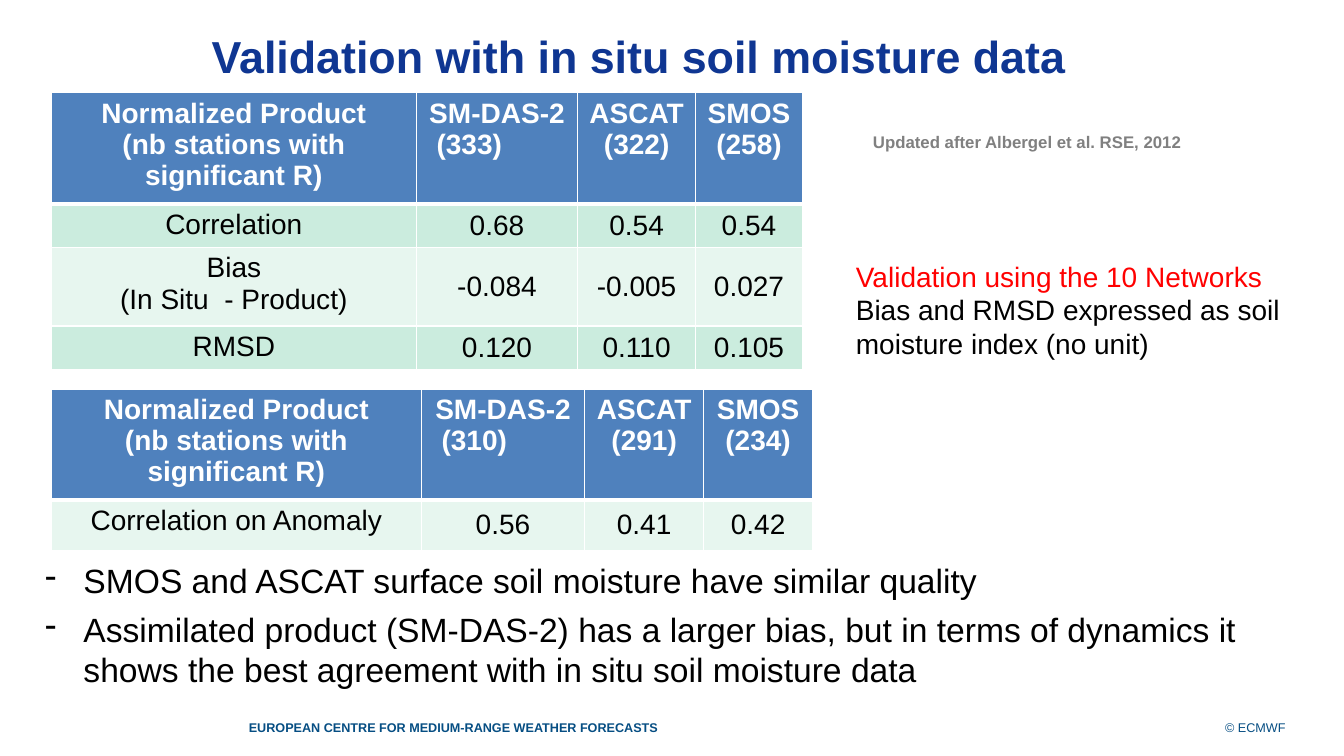
from lxml.etree import SubElement
from pptx import Presentation
from pptx.dml.color import RGBColor
from pptx.enum.text import MSO_ANCHOR, PP_ALIGN
from pptx.oxml.ns import qn
from pptx.util import Inches, Pt

COLORS = {
    "title": "0F3692", "footer": "064E83", "header": "4F81BD", "dark_band": "CBECDE",
    "light_band": "E7F6EF", "white": "FFFFFF", "black": "000000", "red": "FF0000", "gray": "808080",
}
FONT = "Arial"

TITLE = "Validation with in situ soil moisture data"
PRODUCT_HEADING = "Normalized Product\n(nb stations with significant R)"
TABLES = [
    {
        "position": (0.51, 0.92),
        "columns": [3.62, 1.6, 1.17, 1.06],
        "heights": [1.1, 0.42, 0.78, 0.43],
        "bands": ["header", "dark_band", "light_band", "dark_band"],
        "rows": [
            [PRODUCT_HEADING, "SM-DAS-2\n(333)", "ASCAT\n(322)", "SMOS\n(258)"],
            ["Correlation", "0.68", "0.54", "0.54"],
            ["Bias\n(In Situ  - Product)", "-0.084", "-0.005", "0.027"],
            ["RMSD", "0.120", "0.110", "0.105"],
        ],
    },
    {
        "position": (0.51, 3.86),
        "columns": [3.67, 1.62, 1.18, 1.08],
        "heights": [1.1, 0.5],
        "bands": ["header", "light_band"],
        "rows": [
            [PRODUCT_HEADING, "SM-DAS-2\n(310)", "ASCAT\n(291)", "SMOS\n(234)"],
            ["Correlation on Anomaly", "0.56", "0.41", "0.42"],
        ],
    },
]
CITATION = [("Updated after Albergel et al. RSE, 2012", "gray")]
NETWORK_NOTE = [
    ("Validation using the 10 Networks", "red"),
    ("Bias and RMSD expressed as soil moisture index (no unit)", "black"),
]
CONCLUSIONS = [
    ("SMOS and ASCAT surface soil moisture have similar quality", "black"),
    ("Assimilated product (SM-DAS-2) has a larger bias, but in terms of dynamics it "
     "shows the best agreement with in situ soil moisture data", "black"),
]
ORGANISATION = [("EUROPEAN CENTRE FOR MEDIUM-RANGE WEATHER FORECASTS", "footer")]
COPYRIGHT = [("© ECMWF", "footer")]


def color(name):
    return RGBColor.from_string(COLORS[name])


def style(paragraph, size, color_name, bold=False, align=PP_ALIGN.LEFT):
    paragraph.alignment = align
    font = paragraph.font
    font.name, font.size, font.bold = FONT, Pt(size), bold
    font.color.rgb = color(color_name)


def remove_margins(frame):
    frame.margin_left = frame.margin_right = frame.margin_top = frame.margin_bottom = 0


def add_text(slide, box, lines, size, bold=False, align=PP_ALIGN.LEFT, wrap=True):
    shape = slide.shapes.add_textbox(*map(Inches, box))
    frame = shape.text_frame
    frame.word_wrap = wrap
    frame.text = "\n".join(text for text, _ in lines)
    for paragraph, (_, color_name) in zip(frame.paragraphs, lines):
        style(paragraph, size, color_name, bold, align)
    return shape


def add_footer(slide, box, lines, bold, align):
    frame = add_text(slide, box, lines, 9, bold, align).text_frame
    remove_margins(frame)
    frame.vertical_anchor = MSO_ANCHOR.BOTTOM


def set_borders(cell, widths):
    properties = cell._tc.get_or_add_tcPr()
    for index, (side, width) in enumerate(widths.items()):
        line = properties.makeelement(qn(f"a:ln{side}"), {"w": str(Pt(width))})
        fill = SubElement(line, qn("a:solidFill"))
        SubElement(fill, qn("a:srgbClr"), val=COLORS["white"])
        properties.insert(index, line)


def add_results_table(slide, data):
    rows, columns, heights = data["rows"], data["columns"], data["heights"]
    size = (sum(columns), sum(heights))
    frame = slide.shapes.add_table(len(rows), len(columns), *map(Inches, data["position"] + size))
    table = frame.table
    for column, width in zip(table.columns, columns):
        column.width = Inches(width)
    for row, height in zip(table.rows, heights):
        row.height = Inches(height)
    for i, values in enumerate(rows):
        header = i == 0
        for j, value in enumerate(values):
            cell = table.cell(i, j)
            cell.text = value
            cell.fill.solid()
            cell.fill.fore_color.rgb = color(data["bands"][i])
            centred = not header and j > 0
            cell.vertical_anchor = MSO_ANCHOR.MIDDLE if centred else MSO_ANCHOR.TOP
            for paragraph in cell.text_frame.paragraphs:
                style(paragraph, 20, "white" if header else "black", header, PP_ALIGN.CENTER)
            # Heavy rule between the heading and the results
            set_borders(cell, {"L": 1, "R": 1, "T": 3 if i == 1 else 1, "B": 3 if header else 1})
    # Station count of the first product sits towards the left
    station_count = table.cell(0, 1).text_frame.paragraphs[1]
    station_count.alignment = PP_ALIGN.LEFT
    station_count._p.get_or_add_pPr().set("marL", str(Inches(0.1)))


def add_dash_bullets(frame):
    for index, paragraph in enumerate(frame.paragraphs):
        if index:
            paragraph.space_before = Pt(6)
        properties = paragraph._p.get_or_add_pPr()
        properties.set("marL", str(Inches(0.38)))
        properties.set("indent", str(Inches(-0.38)))
        bullet = properties.makeelement(qn("a:buChar"), {"char": "-"})
        properties.find(qn("a:defRPr")).addprevious(bullet)


def main():
    presentation = Presentation()
    presentation.slide_width, presentation.slide_height = Inches(13.33), Inches(7.5)
    slide = presentation.slides.add_slide(presentation.slide_layouts[5])

    # Title
    title = slide.shapes.title
    title.left, title.top, title.width, title.height = map(Inches, (2.1, 0.1, 8.97, 0.9))
    title.text_frame.text = TITLE
    remove_margins(title.text_frame)
    title.text_frame.vertical_anchor = MSO_ANCHOR.MIDDLE
    style(title.text_frame.paragraphs[0], 32, "title", True)

    # Footer
    add_footer(slide, (10.61, 6.89, 2.14, 0.4), COPYRIGHT, False, PP_ALIGN.RIGHT)
    add_footer(slide, (2.28, 7.04, 4.43, 0.25), ORGANISATION, True, PP_ALIGN.CENTER)

    # Citation and results
    citation = add_text(slide, (8.56, 1.26, 3.29, 0.3), CITATION, 12, bold=True, wrap=False)
    citation.fill.solid()
    citation.fill.fore_color.rgb = color("white")
    for data in TABLES:
        add_results_table(slide, data)

    # Conclusions and side note
    conclusions = add_text(slide, (0.35, 5.51, 12.13, 1.4), CONCLUSIONS, 24)
    add_dash_bullets(conclusions.text_frame)
    add_text(slide, (8.39, 2.52, 4.94, 1.11), NETWORK_NOTE, 20)

    presentation.save("out.pptx")


if __name__ == "__main__":
    main()
